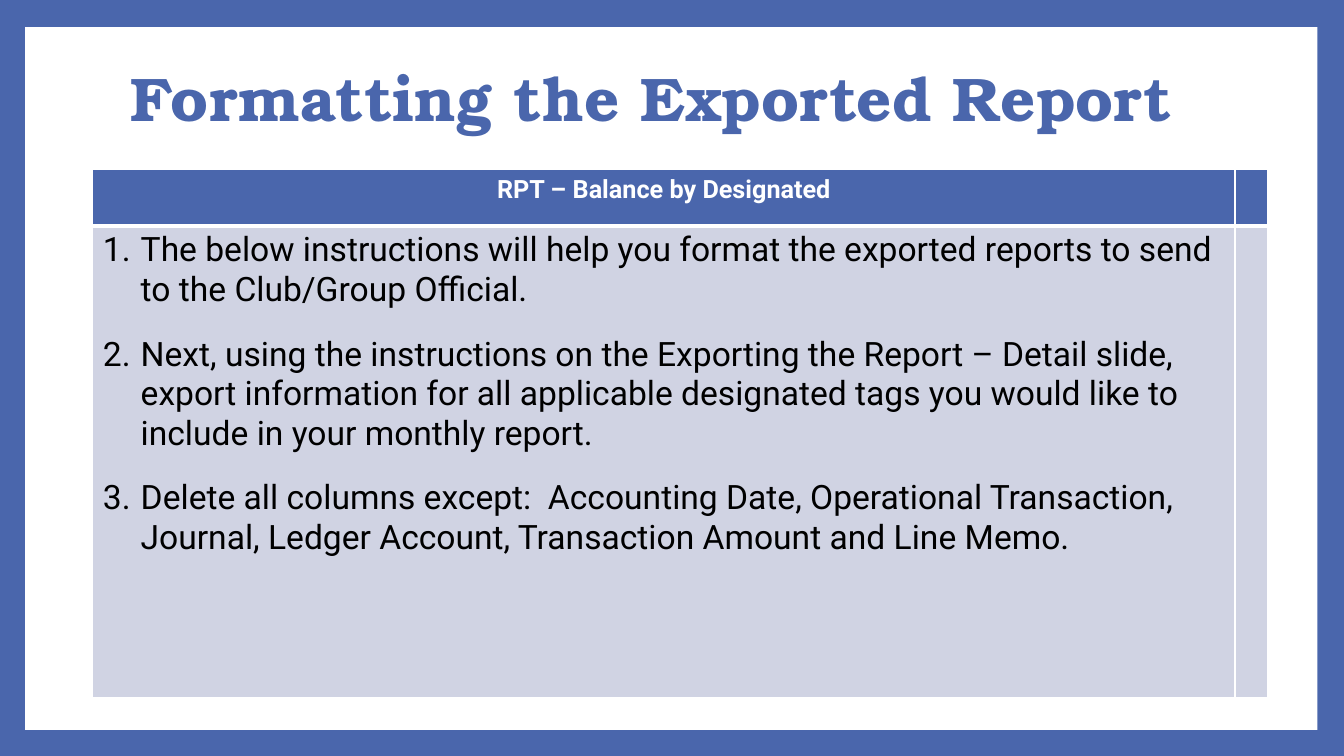
import pptx
import pptx.dml.color
import pptx.enum.shapes
import pptx.enum.text
import pptx.oxml
import pptx.oxml.ns
import pptx.util

Pt = pptx.util.Pt
RGBColor = pptx.dml.color.RGBColor
Align = pptx.enum.text.PP_ALIGN
Anchor = pptx.enum.text.MSO_ANCHOR

BLUE = RGBColor(0x4A, 0x66, 0xAC)
PALE = RGBColor(0xD0, 0xD3, 0xE3)
WHITE = RGBColor(0xFF, 0xFF, 0xFF)
BLACK = RGBColor(0x00, 0x00, 0x00)

HEADING = "RPT – Balance by Designated"
STEPS = [
    "The below instructions will help you format the exported reports to send to the Club/Group Official.",
    "Next, using the instructions on the Exporting the Report – Detail slide, export information for all applicable designated tags you would like to include in your monthly report.",
    "Delete all columns except:  Accounting Date, Operational Transaction, Journal, Ledger Account, Transaction Amount and Line Memo.",
]


class SlideBuilder:
    """Holds the fonts and the current slide and adds each kind of element."""

    title_font = "TeX Gyre Bonum"
    body_font = "Roboto"

    def __init__(self, slide):
        self.slide = slide

    def background(self, color):
        self.slide.background.fill.solid()
        self.slide.background.fill.fore_color.rgb = color

    def panel(self, left, top, width, height, color):
        shape = self.slide.shapes.add_shape(
            pptx.enum.shapes.MSO_SHAPE.RECTANGLE, Pt(left), Pt(top), Pt(width), Pt(height))
        shape.shadow.inherit = False
        shape.fill.solid()
        shape.fill.fore_color.rgb = color
        shape.line.fill.background()

    def format_runs(self, paragraph, font, size, color, bold=False):
        for run in paragraph.runs:
            run.font.name = font
            run.font.size = Pt(size)
            run.font.color.rgb = color
            run.font.bold = bold

    def title(self, text, left, top, width, height):
        text_frame = self.slide.shapes.add_textbox(
            Pt(left), Pt(top), Pt(width), Pt(height)).text_frame
        text_frame.word_wrap = True
        text_frame.vertical_anchor = Anchor.MIDDLE
        text_frame.text = text
        paragraph = text_frame.paragraphs[0]
        paragraph.line_spacing = 0.9
        self.format_runs(paragraph, self.title_font, 44, BLUE, True)

    def table(self, left, top, column_widths, row_heights):
        table = self.slide.shapes.add_table(
            len(row_heights), len(column_widths), Pt(left), Pt(top),
            Pt(sum(column_widths)), Pt(sum(row_heights))).table
        for column, width in zip(table.columns, column_widths):
            column.width = Pt(width)
        for row, height in zip(table.rows, row_heights):
            row.height = Pt(height)
        return table

    def cell(self, cell, color, borders):
        properties = cell._tc.get_or_add_tcPr()
        for side, width in zip("LRTB", borders):
            properties.append(pptx.oxml.parse_xml(
                f'<a:ln{side} {pptx.oxml.ns.nsdecls("a")} w="{Pt(width)}">'
                f'<a:solidFill><a:srgbClr val="{WHITE}"/></a:solidFill></a:ln{side}>'))
        cell.fill.solid()
        cell.fill.fore_color.rgb = color

    def heading(self, cell, text):
        cell.text_frame.text = text
        paragraph = cell.text_frame.paragraphs[0]
        paragraph.alignment = Align.CENTER
        self.format_runs(paragraph, self.body_font, 18, WHITE, True)

    def numbered_list(self, cell, items, indent):
        cell.text_frame.text = "\n".join(items)
        for paragraph in cell.text_frame.paragraphs:
            paragraph.space_after = Pt(18)
            properties = paragraph._p.get_or_add_pPr()
            properties.set("marL", str(Pt(indent)))
            properties.set("indent", str(-Pt(indent)))
            properties.append(pptx.oxml.parse_xml(
                f'<a:buFont {pptx.oxml.ns.nsdecls("a")} typeface="+mj-lt"/>'))
            properties.append(pptx.oxml.parse_xml(
                f'<a:buAutoNum {pptx.oxml.ns.nsdecls("a")} type="arabicPeriod"/>'))
            self.format_runs(paragraph, self.body_font, 24, BLACK)


def main():
    presentation = pptx.Presentation()
    presentation.slide_width = Pt(960)
    presentation.slide_height = Pt(540)
    builder = SlideBuilder(presentation.slides.add_slide(presentation.slide_layouts[6]))

    builder.background(BLUE)
    builder.panel(18, 19.3, 923, 502, WHITE)
    builder.title("Formatting the Exported Report", 86.4, 19.4, 777.6, 106.6)

    table = builder.table(66.3, 121.2, [815.8, 23.6], [40, 337])
    row_styles = [(BLUE, (1, 1, 1, 3)), (PALE, (1, 1, 3, 1))]
    for row, (color, borders) in zip(table.rows, row_styles):
        for cell in row.cells:
            builder.cell(cell, color, borders)
    builder.heading(table.cell(0, 0), HEADING)
    builder.numbered_list(table.cell(1, 0), STEPS, 27)

    presentation.save("out.pptx")


if __name__ == "__main__":
    main()
